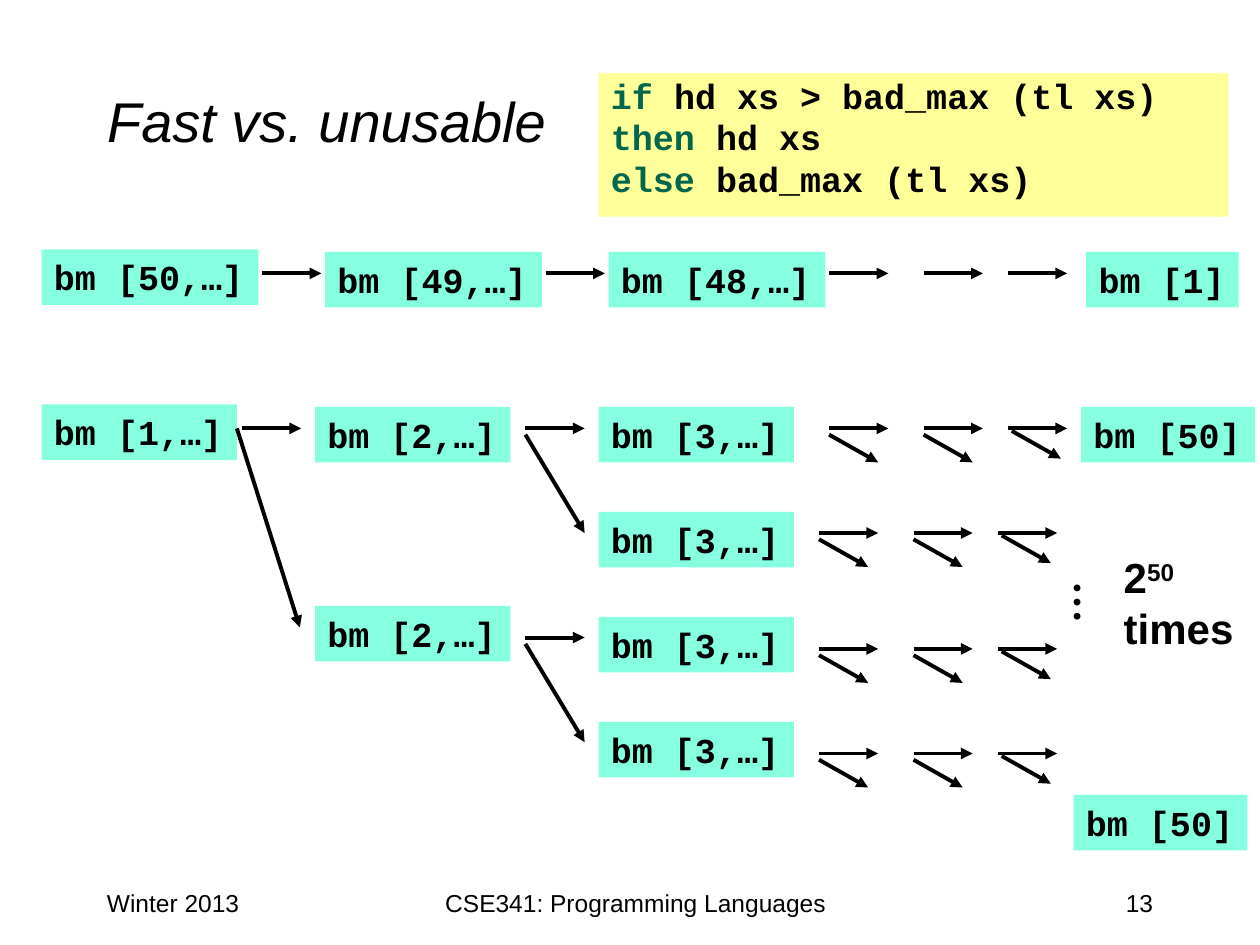
from lxml.etree import SubElement
from pptx import Presentation
from pptx.dml.color import RGBColor
from pptx.enum.shapes import MSO_CONNECTOR, MSO_SHAPE
from pptx.enum.text import MSO_ANCHOR, MSO_AUTO_SIZE, PP_ALIGN
from pptx.oxml.ns import qn
from pptx.util import Inches, Pt

BLACK = RGBColor(0x00, 0x00, 0x00)
GREEN = RGBColor(0x00, 0x66, 0x4D)
AQUA = RGBColor(0x85, 0xFF, 0xE0)
YELLOW = RGBColor(0xFF, 0xFF, 0x99)
SANS = "Arial"
MONO = "Courier New"
SERIF = "Times New Roman"


def add_run(p, text, size=20, font=SANS, color=BLACK, bold=False, italic=False, baseline=0):
    r = p.add_run()
    r.text = text
    r.font.size = Pt(size)
    r.font.name = font
    r.font.color.rgb = color
    r.font.bold = bold
    r.font.italic = italic
    if baseline:
        r.font._element.set("baseline", str(baseline * 1000))
    return r


class SlideBuilder:
    """Hold the style and current slide and add each kind of element."""

    def __init__(self, s):
        self.s = s

    def title(self, text, x, y, w, h):
        sp = self.s.shapes.title
        sp.left, sp.top, sp.width, sp.height = map(Inches, (x, y, w, h))
        sp.text_frame.vertical_anchor = MSO_ANCHOR.MIDDLE
        p = sp.text_frame.paragraphs[0]
        p.alignment = PP_ALIGN.LEFT
        add_run(p, text, size=32, italic=True)

    def text(self, text, x, y, w, h, align=PP_ALIGN.LEFT, wrap=True, rotation=0, **fmt):
        sp = self.s.shapes.add_textbox(*map(Inches, (x, y, w, h)))
        sp.rotation = rotation
        tf = sp.text_frame
        tf.word_wrap = wrap
        p = tf.paragraphs[0]
        p.alignment = align
        add_run(p, text, **fmt)
        return tf

    def box(self, x, y, w, h, fill):
        sp = self.s.shapes.add_shape(MSO_SHAPE.RECTANGLE, *map(Inches, (x, y, w, h)))
        sp.shadow.inherit = False
        sp.fill.solid()
        sp.fill.fore_color.rgb = fill
        sp.line.fill.background()
        tf = sp.text_frame
        tf.vertical_anchor = MSO_ANCHOR.TOP
        tf.paragraphs[0].alignment = PP_ALIGN.LEFT
        return tf

    def call(self, args, x, y, w):
        tf = self.box(x, y, w, 0.44, AQUA)
        tf.word_wrap = False
        tf.auto_size = MSO_AUTO_SIZE.SHAPE_TO_FIT_TEXT
        add_run(tf.paragraphs[0], f"bm [{args}]", font=MONO, bold=True)

    def code(self, lines, x, y, w, h):
        tf = self.box(x, y, w, h, YELLOW)
        tf.word_wrap = True
        for i, (keyword, rest) in enumerate(lines):
            p = tf.add_paragraph() if i else tf.paragraphs[0]
            p.alignment = PP_ALIGN.LEFT
            p.line_spacing = 0.9
            p.space_before = Pt(2)
            pPr = p._p.get_or_add_pPr()
            pPr.set("marL", str(Inches(0.38)))
            pPr.set("indent", str(Inches(-0.38)))
            add_run(p, keyword + " ", font=MONO, color=GREEN, bold=True)
            add_run(p, rest, font=MONO, bold=True)

    def arrow(self, x, y, dx=0.47, dy=0):
        cxn = self.s.shapes.add_connector(
            MSO_CONNECTOR.STRAIGHT, *map(Inches, (x, y, x + dx, y + dy)))
        cxn.line.color.rgb = BLACK
        cxn.line.width = Pt(2.25)
        SubElement(cxn.line._get_or_add_ln(), qn("a:tailEnd"), type="triangle")
        SubElement(cxn._element.spPr, qn("a:effectLst"))

    def branches(self, x, y):
        for dx, fork_dx, fork_dy in ((0, 0, 0.05), (0.75, 0.75, 0.05), (1.42, 1.45, 0.02)):
            self.arrow(x + dx, y)
            self.arrow(x + fork_dx, y + fork_dy, 0.39, 0.22)


def main():
    prs = Presentation()
    prs.slide_width, prs.slide_height = Inches(10), Inches(7.5)
    b = SlideBuilder(prs.slides.add_slide(prs.slide_layouts[5]))

    b.title("Fast vs. unusable", 0.75, 0.33, 8.5, 1.25)
    b.text("Winter 2013", 0.75, 7, 2.08, 0.5, size=14)
    b.text("CSE341: Programming Languages", 3.17, 7, 3.75, 0.5, align=PP_ALIGN.CENTER, size=14)
    b.text("13", 7.17, 7, 2.08, 0.5, align=PP_ALIGN.RIGHT, size=14)
    b.code([("if", "hd xs > bad_max (tl xs)"), ("then", "hd xs"),
            ("else", "bad_max (tl xs)")], 4.75, 0.58, 5, 1.14)

    for args, x, y, w in (
        ("50,…", 0.33, 1.98, 1.72), ("49,…", 2.58, 2, 1.72),
        ("48,…", 4.83, 2, 1.72), ("1", 8.62, 2, 1.21),
        ("1,…", 0.33, 3.21, 1.55), ("2,…", 2.5, 3.23, 1.55), ("2,…", 2.5, 4.81, 1.55),
        ("50", 8.58, 3.23, 1.38), ("50", 8.52, 6.31, 1.38),
    ):
        b.call(args, x, y, w)
    for row in range(4):
        b.call("3,…", 4.75, 3.23 + row * 2.5 / 3, 1.55)

    for x in (2.08, 4.33, 6.58, 7.33, 8):
        b.arrow(x, 2.17)
    b.arrow(1.92, 3.4)
    b.arrow(1.88, 3.4, 0.5, 1.58)
    for y in (3.4, 5.06):
        b.arrow(4.17, y)
        b.arrow(4.17, y + 0.05, 0.47, 0.78)
    for x, y in ((6.58, 3.4), (6.5, 4.23), (6.5, 5.15), (6.5, 5.98)):
        b.branches(x, y)

    b.text("…", 8.39, 4.54, 0.54, 0.5, wrap=False, rotation=90, size=24, font=SERIF, bold=True)
    tf = b.text("2", 8.82, 4.33, 1.08, 0.91, wrap=False, size=24, bold=True)
    add_run(tf.paragraphs[0], "50", size=24, bold=True, baseline=30)
    add_run(tf.add_paragraph(), "times", size=24, bold=True)

    prs.save("out.pptx")


if __name__ == "__main__":
    main()
